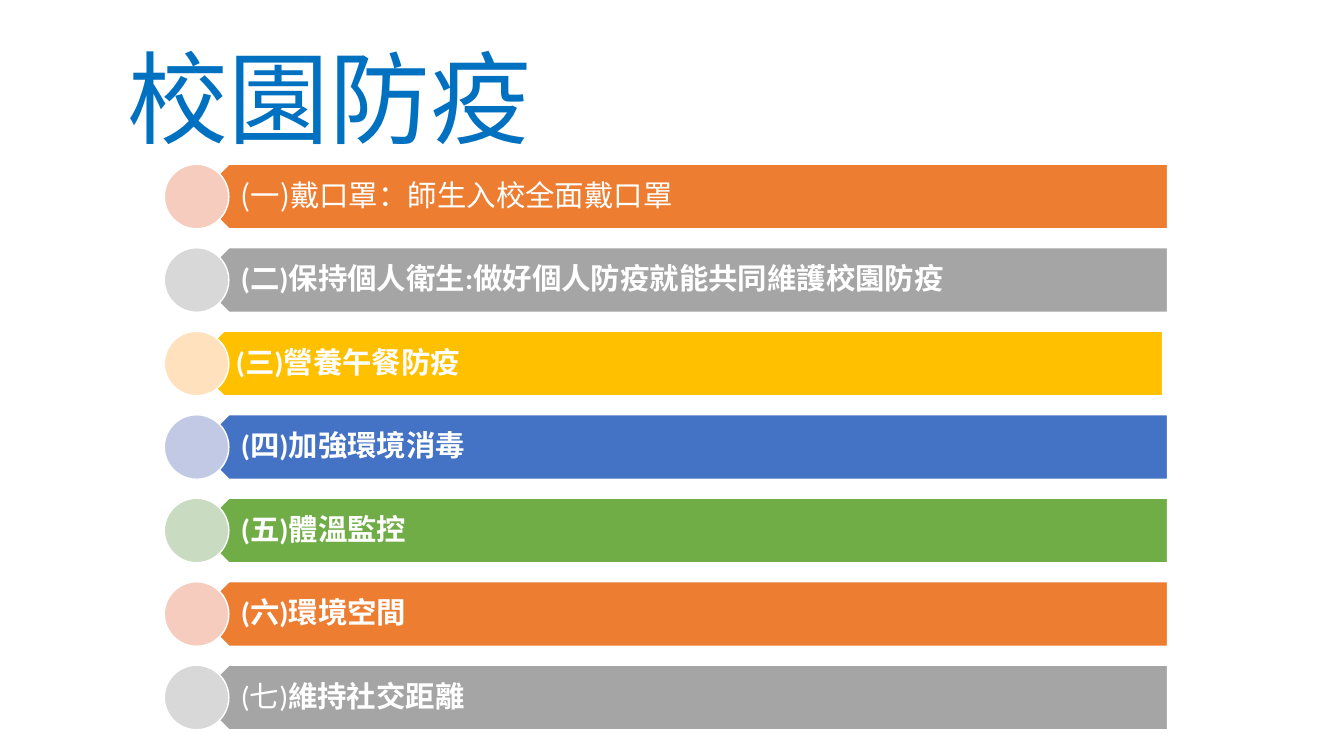
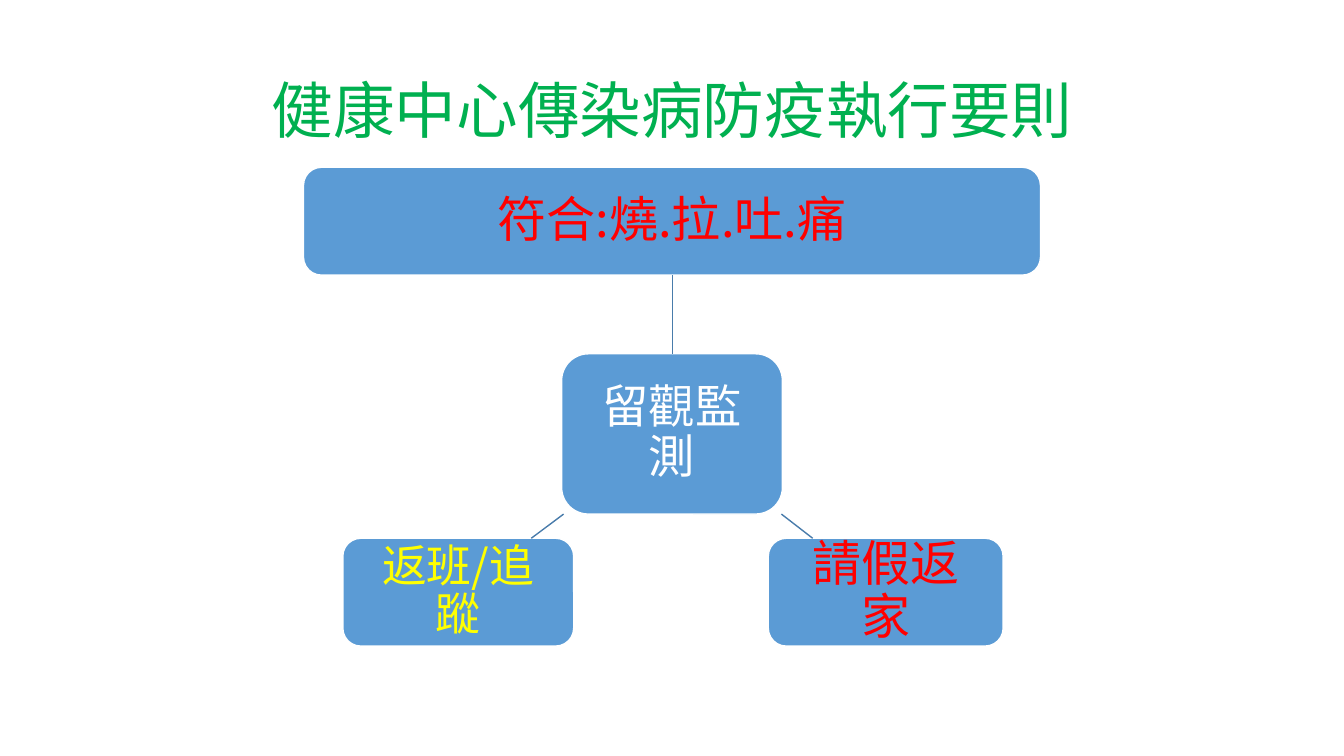
from lxml import etree
from pptx import Presentation
from pptx import util as u
from pptx.dml.color import RGBColor
from pptx.enum import shapes, text

WHITE = RGBColor(0xFF, 0xFF, 0xFF)
RED = RGBColor(0xFF, 0x00, 0x00)
YELLOW = RGBColor(0xFF, 0xFF, 0x00)
BLUE = RGBColor(0x00, 0x70, 0xC0)
GREEN = RGBColor(0x00, 0xB0, 0x50)
NODE = RGBColor(0x5B, 0x9B, 0xD5)
LINK = RGBColor(0x49, 0x7C, 0xAB)
TONES = [
    (RGBColor(0xED, 0x7D, 0x31), RGBColor(0xF6, 0xCC, 0xBE)),
    (RGBColor(0xA5, 0xA5, 0xA5), RGBColor(0xD8, 0xD8, 0xD8)),
    (RGBColor(0xFF, 0xC0, 0x00), RGBColor(0xFF, 0xE2, 0xBD)),
    (RGBColor(0x44, 0x72, 0xC4), RGBColor(0xC1, 0xC9, 0xE4)),
    (RGBColor(0x70, 0xAD, 0x47), RGBColor(0xC9, 0xDB, 0xC1)),
]
CJK = "Noto Sans CJK SC"
LATIN = "Calibri"
NS = "{http://schemas.openxmlformats.org/drawingml/2006/main}"
KIND = shapes.MSO_SHAPE
ALIGN = text.PP_ALIGN


def draw(slide, kind, box, fill):
    shape = slide.shapes.add_shape(kind, *map(u.Inches, box))
    shape.shadow.inherit = False
    shape.fill.solid()
    shape.fill.fore_color.rgb = fill
    shape.line.color.rgb = WHITE
    shape.line.width = u.Pt(1)
    return shape


def write(shape, runs, size, color, align, pads, face=CJK):
    frame = shape.text_frame
    frame.word_wrap = True
    frame.vertical_anchor = text.MSO_ANCHOR.MIDDLE
    for side, pad in zip(("left", "top", "right", "bottom"), pads):
        setattr(frame, "margin_" + side, u.Inches(pad))
    para = frame.paragraphs[0]
    para.alignment = align
    para.line_spacing = 0.9
    for words, bold in runs:
        run = para.add_run()
        run.text = words
        style = {"size": u.Pt(size), "bold": bold, "name": face}
        for key, value in style.items():
            setattr(run.font, key, value)
        run.font.color.rgb = color
        etree.SubElement(run.font._element, NS + "ea", typeface=CJK)


deck = Presentation()
deck.slide_width = u.Inches(13.33)
deck.slide_height = u.Inches(7.5)

TITLES = [
    ("校園防疫", (1.17, 0.16, 11.33, 1.75), 72, BLUE, ALIGN.LEFT),
    ("健康中心傳染病防疫執行要則", (0.92, 0.4, 11.5, 1.45), 44, GREEN, ALIGN.CENTER),
]
pages = []
for words, box, size, color, align in TITLES:
    page = deck.slides.add_slide(deck.slide_layouts[6])
    title = page.shapes.add_textbox(*map(u.Inches, box))
    write(title, [(words, False)], size, color, align, (0.1, 0.05, 0.1, 0.05))
    pages.append(page)
rules, flow = pages

ITEMS = [
    [("(一)戴口罩：師生入校全面戴口罩", False)],
    [("(二)保持個人衛生:做好個人防疫就能共同維護校園防疫", True)],
    [("(三)營養午餐防疫", True)],
    [("(四)加強環境消毒", True)],
    [("(五)體溫監控", True)],
    [("(六)環境空間", True)],
    [("(七)", False), ("維持社交距離", True)],
]
TOP, LAST, HIGH = 1.63, 6.6, 0.64
STEP = (LAST - TOP) / (len(ITEMS) - 1)
for row, runs in enumerate(ITEMS):
    y = TOP + row * STEP
    left = 1.9 if row == 2 else 1.95
    strong, pale = TONES[row % len(TONES)]
    band = draw(rules, KIND.PENTAGON, (left, y, 9.63, HIGH), strong)
    band.rotation = 180
    label = rules.shapes.add_textbox(*map(u.Inches, (left + 0.16, y, 9.47, HIGH)))
    write(label, runs, 21, WHITE, ALIGN.LEFT, (0.28, 0.09, 0.16, 0.09),
          LATIN if row else CJK)
    draw(rules, KIND.OVAL, (1.63, y, HIGH, HIGH), pale)

NODES = [
    ("留觀監測", (5.57, 3.51, 2.19, 1.59), 33, WHITE, 0.17),
    ("符合:燒.拉.吐.痛", (3.01, 1.66, 7.31, 1.07), 35, RED, 0.15),
    ("請假返家", (7.62, 5.34, 2.33, 1.07), 35, RED, 0.15),
    ("返班/追蹤", (3.4, 5.34, 2.29, 1.07), 32, YELLOW, 0.14),
]
for words, box, size, color, pad in NODES:
    node = draw(flow, KIND.ROUNDED_RECTANGLE, box, NODE)
    write(node, [(words, False)], size, color, ALIGN.CENTER, [pad] * 4)

LINKS = [(6.67, 3.51, 6.67, 2.73), (7.75, 5.1, 8.06, 5.34), (5.59, 5.1, 5.27, 5.34)]
for ends in LINKS:
    link = flow.shapes.add_connector(
        shapes.MSO_CONNECTOR.STRAIGHT, *map(u.Inches, ends))
    link.line.color.rgb = LINK
    link.line.width = u.Pt(1)
    etree.SubElement(link._element.spPr, NS + "effectLst")

deck.save("out.pptx")
